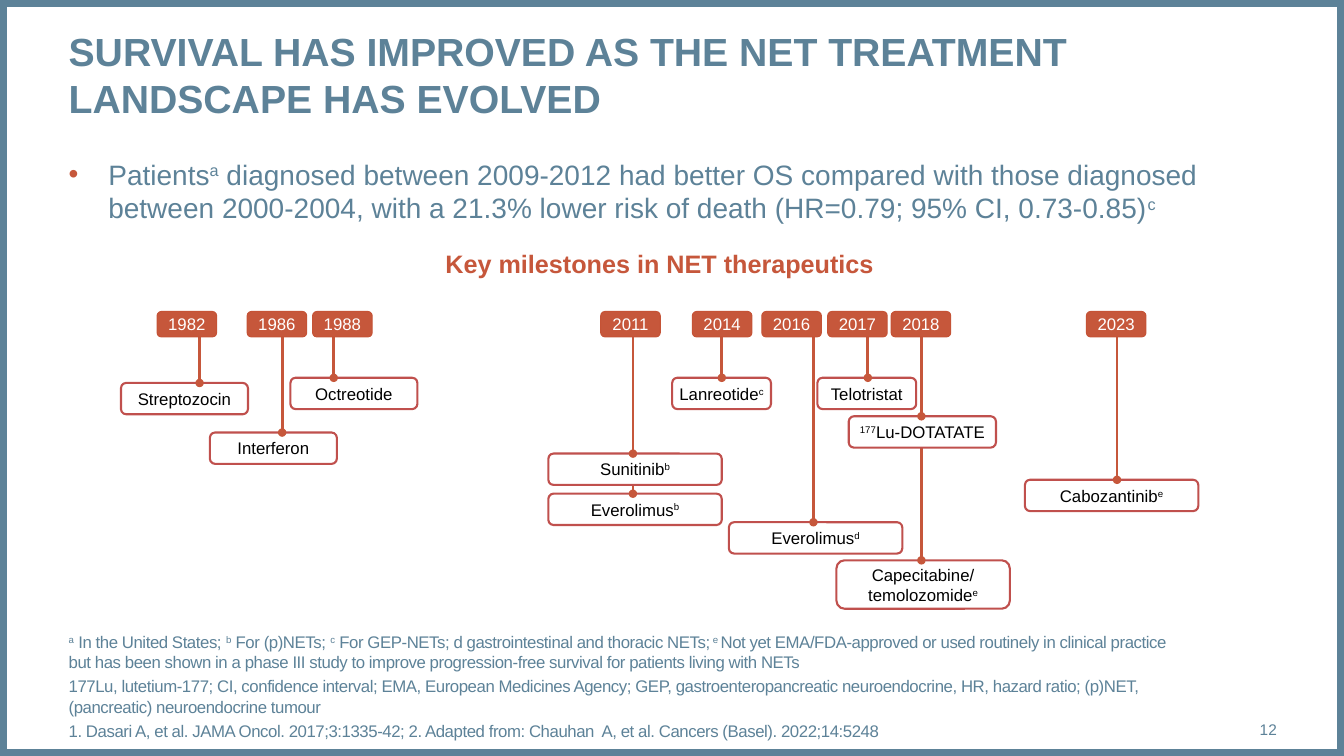
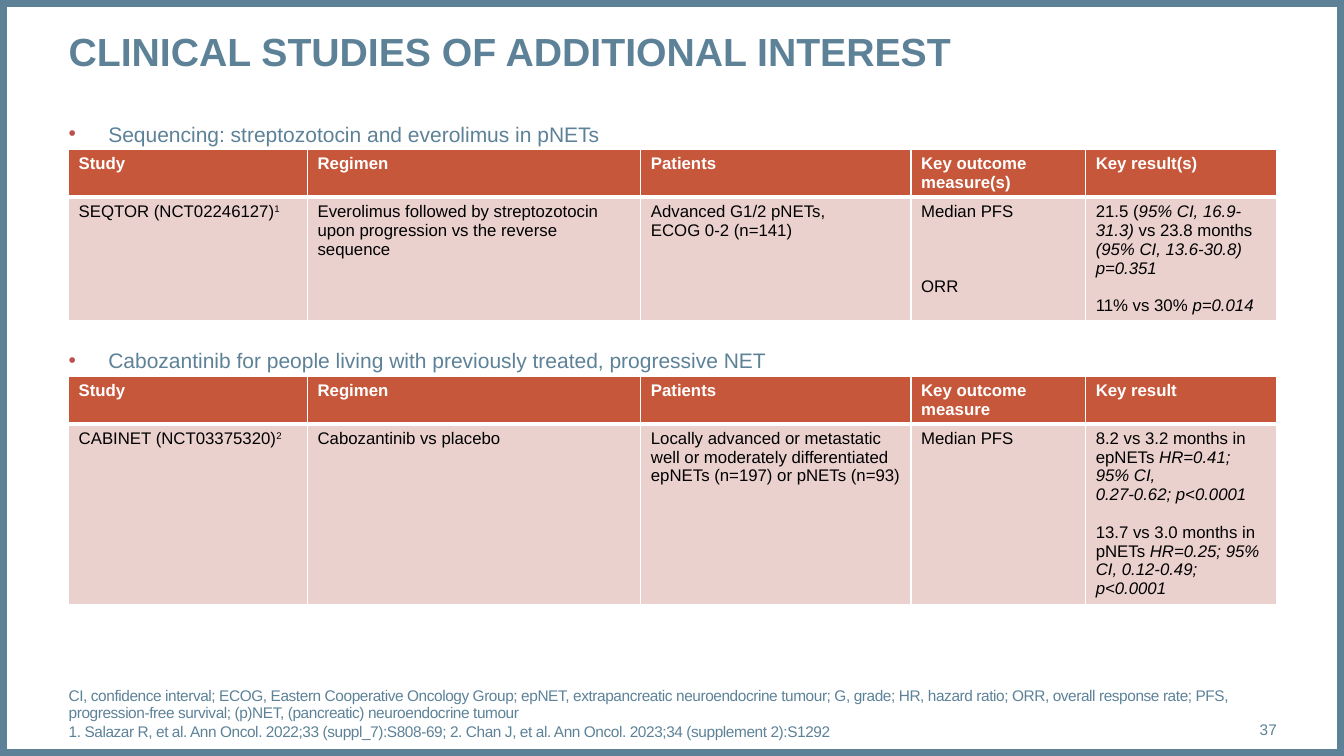
from dataclasses import dataclass

from lxml import etree
from pptx import Presentation
from pptx.dml.color import RGBColor
from pptx.enum.shapes import MSO_CONNECTOR, MSO_SHAPE
from pptx.enum.text import MSO_ANCHOR, MSO_AUTO_SIZE, PP_ALIGN
from pptx.oxml.ns import qn
from pptx.util import Cm, Pt

LINE = MSO_CONNECTOR.STRAIGHT
RECT, ROUND = MSO_SHAPE.RECTANGLE, MSO_SHAPE.ROUNDED_RECTANGLE
TOP, MID, BASE = MSO_ANCHOR.TOP, MSO_ANCHOR.MIDDLE, MSO_ANCHOR.BOTTOM
LEFT, MIDDLE, RIGHT = PP_ALIGN.LEFT, PP_ALIGN.CENTER, PP_ALIGN.RIGHT
FIXED = MSO_AUTO_SIZE.NONE
SUP, ITAL = "sup", "ital"


@dataclass(frozen=True)
class Theme:
    font: str = "Arial"
    blue: str = "5D8298"
    rust: str = "C6573B"
    edge: str = "C55336"
    red: str = "C0504D"
    pink: str = "EAD1CE"
    white: str = "FFFFFF"
    black: str = "000000"
    title: int = 28
    lead: int = 20
    head: int = 18
    sub: int = 15
    text: int = 12
    small: int = 11
    pitch: float = 13.4


T = Theme()
WIDE, HIGH = 33.87, 19.05
EDGE, SPAN = 1.73, 30.45
HANG = 1.0
TAG = (1.5, 0.64)
TAG_Y, BOX_H = 1.73, 0.79

# year, tag x, stem x, drugs from lowest to highest: (lines, x, y, width)
EVENTS = [
    ("1982", 0.91, 1.98, [([["Streptozocin"]], 0, 3.53, 3.2)]),
    ("1986", 3.18, 4.06, [([["Interferon"]], 2.24, 4.78, 3.2)]),
    ("1988", 4.83, 5.36, [([["Octreotide"]], 4.27, 3.4, 3.2)]),
    ("2011", 12.09, 12.9, [
        ([["Everolimus", ("b", SUP)]], 10.77, 6.32, 4.37),
        ([["Sunitinib", ("b", SUP)]], 10.77, 5.31, 4.37)]),
    ("2014", 14.4, 15.14, [([["Lanreotide", ("c", SUP)]], 13.89, 3.4, 2.49)]),
    ("2016", 16.15, 17.45, [([["Everolimus", ("d", SUP)]], 15.32, 7.04, 4.37)]),
    ("2017", 17.81, 18.82, [([["Telotristat"]], 17.55, 3.4, 2.49)]),
    ("2018", 19.41, 20.17, [
        ([["Capecitabine/"], ["temolozomide", ("e", SUP)]], 18.03, 8, 4.37),
        ([[("177", SUP), "Lu-DOTATATE"]], 18.34, 4.37, 3.71)]),
    ("2023", 24.33, 25.1, [([["Cabozantinib", ("e", SUP)]], 22.78, 5.97, 4.37)]),
]

LEAD = [["Patients", ("a", SUP),
         " diagnosed between 2009-2012 had better OS compared with those diagnosed "
         "between 2000-2004, with a 21.3% lower risk of death "
         "(HR=0.79; 95% CI, 0.73-0.85)", ("c", SUP)]]
NOTES = [
    [("a", SUP), " In the United States; ", ("b", SUP), " For (p)NETs; ", ("c", SUP),
     " For GEP-NETs; d gastrointestinal and thoracic NETs;", (" e ", SUP),
     "Not yet EMA/FDA-approved or used routinely in clinical practice but has been "
     "shown in a phase III study to improve progression-free survival for patients "
     "living with NETs"],
    ["177Lu, lutetium-177; CI, confidence interval; EMA, European Medicines Agency; "
     "GEP, gastroenteropancreatic neuroendocrine, HR, hazard ratio; (p)NET, "
     "(pancreatic) neuroendocrine tumour"],
    ["1. Dasari A, et al. JAMA Oncol. 2017;3:1335-42; 2. Adapted from: Chauhan  A, "
     "et al. Cancers (Basel). 2022;14:5248"],
]
TERMS = [
    ["CI, confidence interval; ECOG, Eastern Cooperative Oncology Group; epNET, "
     "extrapancreatic neuroendocrine tumour; G, grade; HR, hazard ratio; ORR, overall "
     "response rate; PFS, progression-free survival; (p)NET, (pancreatic) "
     "neuroendocrine tumour"],
    ["1. Salazar R, et al. Ann Oncol. 2022;33 (suppl_7):S808-69; 2. Chan J, et al. "
     "Ann Oncol. 2023;34 (supplement 2):S1292"],
]

# A number that opens a line counts the text lines left free above it.
SEQTOR = (
    ["Study", "Regimen", "Patients", "Key outcome measure(s)", "Key result(s)"],
    [[["SEQTOR (NCT02246127)", ("1", SUP)]],
     [["Everolimus followed by streptozotocin upon progression vs the reverse sequence"]],
     [["Advanced G1/2 pNETs,"], ["ECOG 0-2 (n=141)"]],
     [["Median PFS"], [3, "ORR"]],
     [["21.5 (", ("95% CI, 16.9-31.3)", ITAL), " vs 23.8 months ",
       ("(95% CI, 13.6-30.8) p=0.351", ITAL)],
      [1, "11% vs 30% ", ("p=0.014", ITAL)]]])
CABINET = (
    ["Study", "Regimen", "Patients", "Key outcome measure", "Key result"],
    [[["CABINET (NCT03375320)", ("2", SUP)]],
     [["Cabozantinib vs placebo"]],
     [["Locally advanced or metastatic well or moderately differentiated "
       "epNETs (n=197) or pNETs (n=93)"]],
     [["Median PFS"]],
     [["8.2 vs 3.2 months in epNETs ", ("HR=0.41; 95% CI,", ITAL)],
      [("0.27-0.62; p<0.0001", ITAL)],
      [1, "13.7 vs 3.0 months in pNETs ", ("HR=0.25; 95% CI, 0.12-0.49; p<0.0001", ITAL)]]])
COLS = [6.02, 8.4, 6.81, 4.4, 4.8]
HEAD_H = 1.17


def rgb(code):
    return RGBColor.from_string(code)


def add(parent, tag, **attrs):
    return etree.SubElement(parent, qn(tag), attrs)


def place(shape, box):
    shape.left, shape.top, shape.width, shape.height = map(Cm, box)


def bullet(para, color):
    """Hang a dot of the given colour, or clear the bullet if there is none."""
    props = para._p.get_or_add_pPr()
    hang = Cm(HANG) if color else 0
    props.set("marL", str(hang))
    props.set("indent", str(-hang))
    if color:
        add(add(props, "a:buClr"), "a:srgbClr", val=color)
        add(props, "a:buFont", typeface=T.font)
        add(props, "a:buChar", char="•")
    else:
        add(props, "a:buNone")


def write(frame, lines, size, color, bold=False, align=LEFT, dot=None,
          before=0, after=0, tight=0, track=0):
    """Fill a frame; a line holds strings and (string, style) pairs."""
    for i, line in enumerate(lines):
        para = frame.add_paragraph() if i else frame.paragraphs[0]
        bullet(para, dot)
        gap = before
        if isinstance(line[0], int):
            gap, line = line[0] * T.pitch, line[1:]
        para.alignment = align
        para.space_before = Pt(gap if i else 0)
        para.space_after = Pt(after)
        if tight:
            para.line_spacing = tight
        for part in line:
            text, style = (part, None) if isinstance(part, str) else part
            run = para.add_run()
            run.text = text
            font = run.font
            font.name, font.size, font.bold = T.font, Pt(size), bold
            font.italic = style == ITAL
            font.color.rgb = rgb(color)
            props = run._r.get_or_add_rPr()
            if style == SUP:
                props.set("baseline", "30000")
            if track:
                props.set("spc", str(track))


def setup(frame, anchor, pad=0):
    frame.word_wrap = True
    frame.auto_size = FIXED
    frame.vertical_anchor = anchor
    frame.margin_left = frame.margin_right = 0
    frame.margin_top = frame.margin_bottom = Cm(pad)


def fill(holder, box, lines, size, anchor=TOP, **style):
    """Move a placeholder or text box and write blue text in it."""
    place(holder, box)
    setup(holder.text_frame, anchor)
    write(holder.text_frame, lines, size, style.pop("color", T.blue), **style)


def label(slide, box, paint, line, width):
    shape = slide.shapes.add_shape(ROUND, *map(Cm, box))
    shape.shadow.inherit = False
    shape.fill.solid()
    shape.fill.fore_color.rgb = rgb(paint)
    shape.line.color.rgb = rgb(line)
    shape.line.width = Pt(width)
    setup(shape.text_frame, MID)
    return shape.text_frame


def stem(slide, x, top, end):
    line = slide.shapes.add_connector(LINE, Cm(x), Cm(top), Cm(x), Cm(end))
    line.line.color.rgb = rgb(T.rust)
    line.line.width = Pt(2)
    add(line.line._get_or_add_ln(), "a:tailEnd", type="oval")
    add(line._element.spPr, "a:effectLst")


def event(slide, left, top, year, tag_x, stem_x, drugs):
    """Draw a year with its drugs; each upper box covers the stem below it."""
    tag_y = top + TAG_Y
    for lines, x, y, width in drugs:
        high = BOX_H if len(lines) == 1 else 1.22
        frame = label(slide, (left + x, top + y, width, high), T.white, T.red, 1.5)
        write(frame, lines, T.text, T.black, align=MIDDLE)
        stem(slide, left + stem_x, tag_y + TAG[1] / 2, top + y)
    frame = label(slide, (left + tag_x, tag_y, *TAG), T.rust, T.edge, 0.75)
    write(frame, [[year]], T.text, T.white, align=MIDDLE)


def timeline(slide, left, top, width):
    head = slide.shapes.add_textbox(0, 0, 0, 0)
    fill(head, (left, top, width, 1.02), [["Key milestones in NET therapeutics"]],
         T.head, MID, color=T.rust, bold=True, align=MIDDLE)
    for item in EVENTS:
        event(slide, left, top, *item)


def borders(cell, base):
    props = cell._tc.get_or_add_tcPr()
    for side in "LRTB":
        width = base if side == "B" else 1
        line = add(props, f"a:ln{side}", w=str(Pt(width)))
        add(add(line, "a:solidFill"), "a:srgbClr", val=T.white)


def study(slide, left, top, high, data):
    names, facts = data
    shape = slide.shapes.add_table(2, len(COLS), Cm(left), Cm(top),
                                   Cm(sum(COLS)), Cm(HEAD_H + high))
    table = shape.table
    table.horz_banding = False
    for col, width in zip(table.columns, COLS):
        col.width = Cm(width)
    rows = [([[[name]] for name in names], HEAD_H, T.rust, T.white, True, 3),
            (facts, high, T.pink, T.black, False, 1)]
    for r, (texts, tall, paint, color, bold, base) in enumerate(rows):
        table.rows[r].height = Cm(tall)
        for c, lines in enumerate(texts):
            cell = table.cell(r, c)
            borders(cell, base)
            cell.fill.solid()
            cell.fill.fore_color.rgb = rgb(paint)
            write(cell.text_frame, lines, T.text, color, bold)


def start(prs, layout, title, page):
    """Add a slide with the shared frame, title and page number."""
    slide = prs.slides.add_slide(prs.slide_layouts[layout])
    frame = slide.shapes.add_shape(RECT, 0, 0, Cm(WIDE), Cm(HIGH))
    frame.shadow.inherit = False
    frame.fill.background()
    frame.line.color.rgb = rgb(T.blue)
    frame.line.width = Pt(10)
    fill(slide.shapes.title, (EDGE, 0.68, SPAN, 2.4), [[title]], T.title, bold=True)
    number = slide.shapes.add_textbox(0, 0, 0, 0)
    fill(number, (30, 17.86, 2.18, 1.02), [[page]], T.small, MID, align=RIGHT)
    return slide


def notes(holder, width, lines, size, **style):
    fill(holder, (EDGE, 15.75, width, 2.92), lines, size, BASE, track=-30, **style)


def history(prs):
    slide = start(prs, 3, "SURVIVAL HAS IMPROVED AS THE NET TREATMENT "
                          "LANDSCAPE HAS EVOLVED", "12")
    lead, foot = list(slide.placeholders)[1:]
    fill(lead, (EDGE, 3.96, SPAN, 2.2), LEAD, T.lead, dot=T.rust)
    notes(foot, 28.27, NOTES, T.text, before=3)
    timeline(slide, 3.05, 6.12, 27.15)


def studies(prs):
    slide = start(prs, 4, "CLINICAL STUDIES OF ADDITIONAL INTEREST", "37")
    first, foot, second, spare = list(slide.placeholders)[1:]
    spare._element.getparent().remove(spare._element)
    parts = [
        (first, 3.05, "Sequencing: streptozotocin and everolimus in pNETs", 3.1, SEQTOR),
        (second, 8.76, "Cabozantinib for people living with previously treated, "
                       "progressive NET", 4.55, CABINET)]
    for holder, top, text, high, data in parts:
        fill(holder, (EDGE, top, SPAN, 0.6), [[text]], T.sub, dot=T.red)
        study(slide, EDGE, top + 0.72, high, data)
    notes(foot, SPAN, TERMS, T.small, after=2, tight=0.9)


def main():
    prs = Presentation()
    prs.slide_width, prs.slide_height = Cm(WIDE), Cm(HIGH)
    history(prs)
    studies(prs)
    prs.save("out.pptx")


if __name__ == "__main__":
    main()
